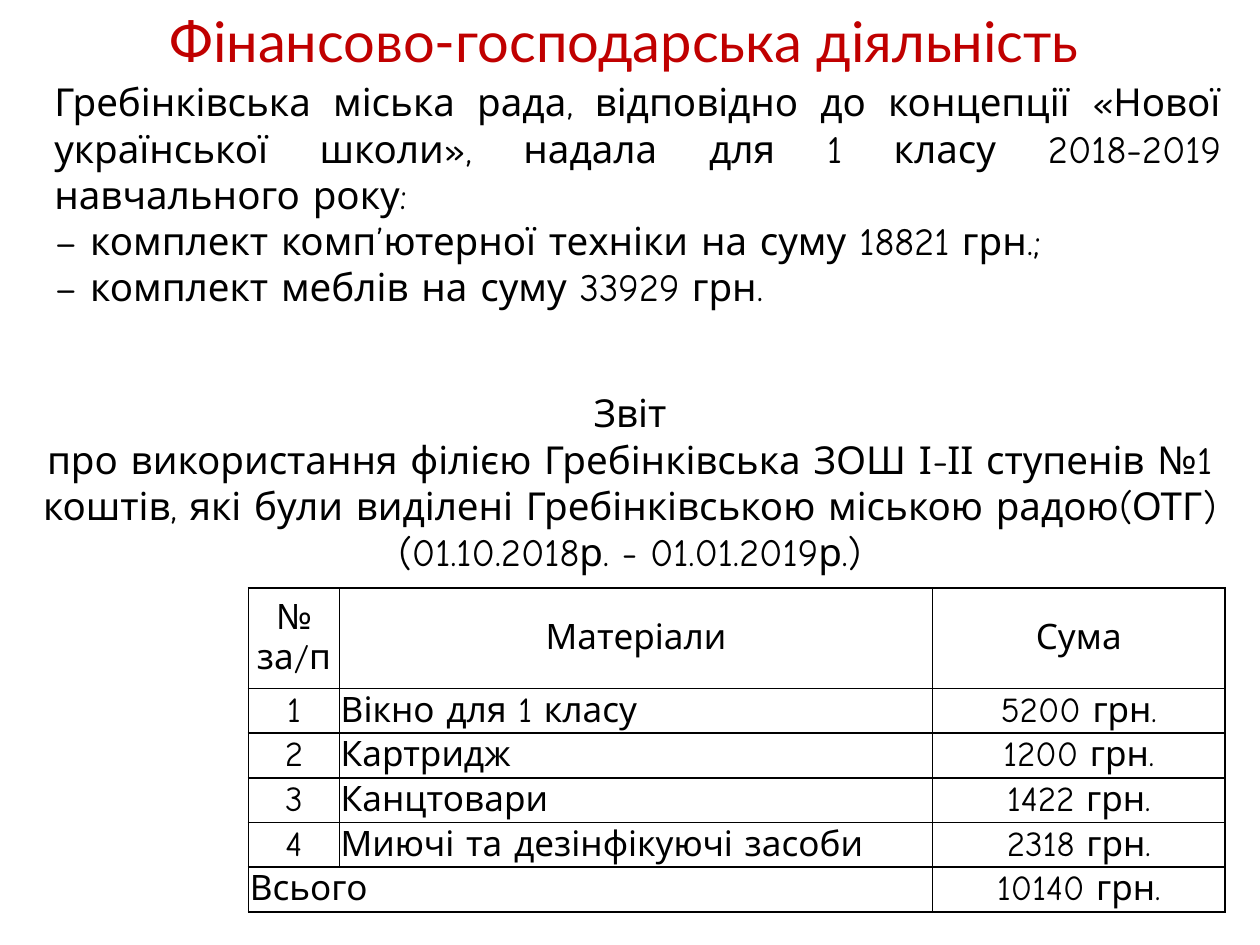
import pptx
import pptx.util
import pptx.enum.text
import pptx.dml.color
import pptx.oxml
from dataclasses import dataclass
from lxml import etree

Pt = pptx.util.Pt
Align = pptx.enum.text.PP_ALIGN
Anchor = pptx.enum.text.MSO_ANCHOR
Fit = pptx.enum.text.MSO_AUTO_SIZE
RGB = pptx.dml.color.RGBColor
NS = "http://schemas.openxmlformats.org/drawingml/2006/main"


@dataclass(frozen=True)
class Theme:
    red: str = "C00000"
    black: str = "000000"
    head: str = "Lato"
    body: str = "Comic Neue"
    title: int = 32
    text: int = 22
    cell: int = 20
    line: int = 1
    inset: float = 0.75


THEME = Theme()
HEAD = {"name": THEME.head, "size": Pt(THEME.title)}
BODY = {"name": THEME.body, "size": Pt(THEME.text)}
CELL = {"name": THEME.body, "size": Pt(THEME.cell)}

INTRO = [
    "Гребінківська міська рада, відповідно до концепції «Нової української школи», "
    "надала для 1 класу 2018-2019 навчального року:",
    "– комплект комп’ютерної техніки на суму 18821 грн.;",
    "– комплект меблів на суму 33929 грн.",
]
REPORT = [
    "Звіт",
    "про використання філією Гребінківська ЗОШ І-ІІ ступенів №1 коштів, "
    "які були виділені Гребінківською міською радою(ОТГ)",
    "(01.10.2018р. - 01.01.2019р.)",
]
ROWS = [
    ("№ за/п", "Матеріали", "Сума"),
    ("1", "Вікно для 1 класу", "5200 грн."),
    ("2", "Картридж", "1200 грн."),
    ("3", "Канцтовари", "1422 грн."),
    ("4", "Миючі та дезінфікуючі засоби", "2318 грн."),
    ("Всього", "", "10140 грн."),
]


def style(item, form):
    for key, value in form.items():
        setattr(item, key, value)


def write(frame, lines, form, align, tint=THEME.black):
    for i, line in enumerate(lines):
        para = frame.add_paragraph() if i else frame.paragraphs[0]
        para.alignment = align
        run = para.add_run()
        run.text = line
        style(run.font, form)
        run.font.color.rgb = RGB.from_string(tint)


def add_text(slide, box, lines, form, align, anchor=Anchor.TOP,
             fit=Fit.NONE, tint=THEME.black):
    frame = slide.shapes.add_textbox(*map(Pt, box)).text_frame
    style(frame, {"word_wrap": True, "auto_size": fit, "vertical_anchor": anchor})
    write(frame, lines, form, align, tint)


def add_edges(cell):
    props = cell._tc.get_or_add_tcPr()
    for side in ("lnL", "lnR", "lnT", "lnB"):
        edge = etree.SubElement(props, f"{{{NS}}}{side}", w=str(Pt(THEME.line)))
        fill = etree.SubElement(edge, f"{{{NS}}}solidFill")
        etree.SubElement(fill, f"{{{NS}}}srgbClr", val=THEME.black)


def add_costs(slide, box, rows, cols, top):
    """Cost table: a tall header row, then equal rows in the rest of the box."""
    table = slide.shapes.add_table(len(rows), len(cols), *map(Pt, box)).table
    style(table, {"first_row": False, "horz_banding": False})
    for col, width in zip(table.columns, cols):
        col.width = Pt(width)
    rest = (box[3] - top) / (len(rows) - 1)
    last = len(rows) - 1
    sides = ("left", "right", "top", "bottom")
    form = {f"margin_{side}": Pt(THEME.inset) for side in sides}
    form["vertical_anchor"] = Anchor.MIDDLE
    for r, row in enumerate(rows):
        table.rows[r].height = Pt(rest if r else top)
        for c, text in enumerate(row):
            cell = table.cell(r, c)
            style(cell, form)
            add_edges(cell)
            cell.fill.background()
            if text:
                left = r == last and c == 0 or r > 0 and c == 1
                align = Align.JUSTIFY if left else Align.CENTER
                write(cell.text_frame, [text], CELL, align)
    # Total label spans the first two columns
    table.cell(last, 0).merge(table.cell(last, 1))


def main():
    deck = pptx.Presentation()
    style(deck, {"slide_width": Pt(720), "slide_height": Pt(540)})
    slide = deck.slides.add_slide(deck.slide_layouts[6])

    # Title
    add_text(slide, (38, 0, 638, 46), ["Фінансово-господарська діяльність"],
             HEAD, Align.CENTER, fit=Fit.SHAPE_TO_FIT_TEXT, tint=THEME.red)
    # Support from the council
    add_text(slide, (24, 40.5, 681, 140.5), INTRO, BODY, Align.JUSTIFY,
             anchor=Anchor.MIDDLE, fit=Fit.SHAPE_TO_FIT_TEXT)
    # Costs
    add_costs(slide, (142, 336, 558, 185), ROWS, (52, 339, 167), 57.5)
    # Report heading
    add_text(slide, (0, 219, 720, 135), REPORT, BODY, Align.CENTER)

    deck.save("out.pptx")


if __name__ == "__main__":
    main()
